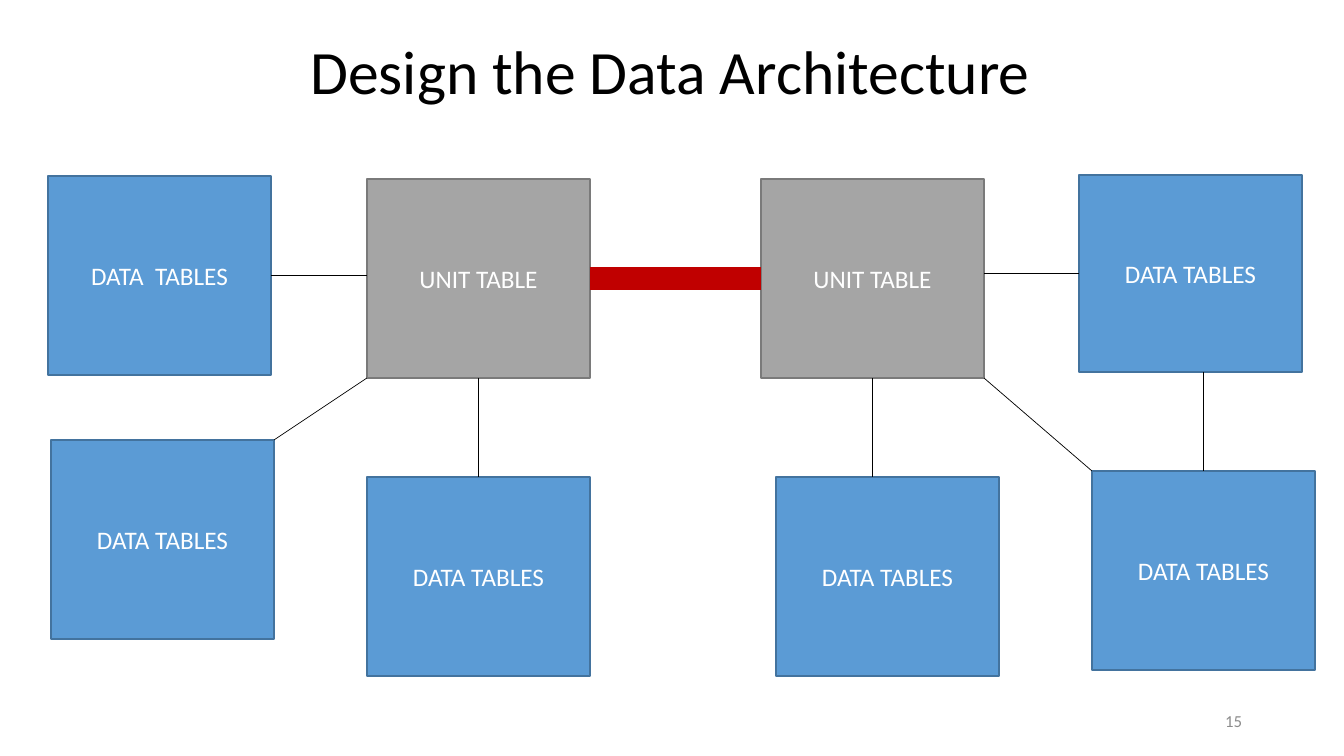
from lxml.etree import SubElement
from pptx import Presentation
from pptx.dml.color import RGBColor
from pptx.enum.shapes import MSO_CONNECTOR, MSO_SHAPE
from pptx.enum.text import MSO_ANCHOR, PP_ALIGN
from pptx.oxml.ns import qn
from pptx.util import Pt

# Content: lengths in px
TITLE = ("Design the Data Architecture", (0, 2, 1341, 146))
PAGE_NUMBER = ("15", (950, 701, 302, 40))
BOX_WIDTH, BOX_HEIGHT = 223, 199

# name: (label, kind, left, top, height)
BOXES = {
    "left unit": ("UNIT TABLE", "unit", 367, 179, BOX_HEIGHT),
    "southwest": ("DATA TABLES", "data", 51, 440, BOX_HEIGHT),
    "south left": ("DATA TABLES", "data", 367, 477, BOX_HEIGHT),
    "west": ("DATA  TABLES", "data", 48, 176, BOX_HEIGHT),
    "right unit": ("UNIT TABLE", "unit", 761, 179, BOX_HEIGHT),
    "south right": ("DATA TABLES", "data", 776, 477, BOX_HEIGHT),
    "southeast": ("DATA TABLES", "data", 1092, 471, BOX_HEIGHT),
    "east": ("DATA TABLES", "data", 1079, 175, 197),
}

# (start box, spot, end box, spot, joined ends, kind)
LINKS = [
    ("west", "right", "left unit", "left", "start", "thin"),
    ("southwest", "top right", "left unit", "bottom left", "none", "thin"),
    ("left unit", "bottom", "south left", "top", "both", "thin"),
    ("right unit", "right", "east", "left", "end", "thin"),
    ("right unit", "bottom right", "southeast", "top left", "none", "thin"),
    ("east", "bottom", "southeast", "top", "end", "thin"),
    ("right unit", "bottom", "south right", "top", "start", "thin"),
    ("left unit", "right", "right unit", "left", "both", "bridge"),
]

THEME = {
    "font": "Calibri",
    "sizes": {"title": 44, "label": 18, "number": 12},
    "text": {"title": "000000", "label": "FFFFFF", "number": "8C8C8C"},
    "boxes": {"unit": ("A5A5A5", "7A7A7A"), "data": ("5B9BD5", "43739E")},
    "links": {"thin": ("000000", 0.5), "bridge": ("C00000", 17)},
}
SITES = {"top": 0, "left": 1, "bottom": 2, "right": 3}
PX = 914400 / 100.8


def emu(length):
    return round(length * PX)


def color(code):
    return RGBColor.from_string(code)


def write(frame, text, role, align=PP_ALIGN.CENTER, spacing=None):
    frame.word_wrap = True
    frame.vertical_anchor = MSO_ANCHOR.MIDDLE
    para = frame.paragraphs[0]
    para.alignment = align
    para.line_spacing = spacing
    span = para.add_run()
    span.text = text
    span.font.name = THEME["font"]
    span.font.size = Pt(THEME["sizes"][role])
    span.font.color.rgb = color(THEME["text"][role])


def add_text(page, content, role, **style):
    text, place = content
    box = page.shapes.add_textbox(*map(emu, place))
    write(box.text_frame, text, role, **style)


def add_box(page, label, kind, left, top, height):
    box = page.shapes.add_shape(
        MSO_SHAPE.RECTANGLE, *map(emu, (left, top, BOX_WIDTH, height)))
    fill, outline = THEME["boxes"][kind]
    box.shadow.inherit = False
    box.fill.solid()
    box.fill.fore_color.rgb = color(fill)
    box.line.color.rgb = color(outline)
    box.line.width = Pt(1)
    write(box.text_frame, label, "label")
    return box


def point(box, spot):
    across = 0 if "left" in spot else 1 if "right" in spot else 0.5
    down = 0 if "top" in spot else 1 if "bottom" in spot else 0.5
    return [round(box.left + across * box.width),
            round(box.top + down * box.height)]


def add_link(page, start, start_spot, end, end_spot, joined, kind):
    begin, finish = point(start, start_spot), point(end, end_spot)
    # A free end lines up with the joined one
    axis = 1 if start_spot in ("left", "right") else 0
    if joined == "start":
        finish[axis] = begin[axis]
    elif joined == "end":
        begin[axis] = finish[axis]
    link = page.shapes.add_connector(MSO_CONNECTOR.STRAIGHT, *begin, *finish)
    if joined in ("start", "both"):
        link.begin_connect(start, SITES[start_spot])
    if joined in ("end", "both"):
        link.end_connect(end, SITES[end_spot])
    stroke, width = THEME["links"][kind]
    link.line.color.rgb = color(stroke)
    link.line.width = Pt(width)
    SubElement(link.element.spPr, qn("a:effectLst"))


def main():
    deck = Presentation()
    deck.slide_width, deck.slide_height = emu(1344), emu(756)
    page = deck.slides.add_slide(deck.slide_layouts[6])

    # Title and page number
    add_text(page, TITLE, "title", spacing=0.9)
    add_text(page, PAGE_NUMBER, "number", align=PP_ALIGN.RIGHT)

    # Tables and the links between them
    boxes = {name: add_box(page, *details) for name, details in BOXES.items()}
    for start, start_spot, end, end_spot, joined, kind in LINKS:
        add_link(page, boxes[start], start_spot, boxes[end], end_spot,
                 joined, kind)

    deck.save("out.pptx")


if __name__ == "__main__":
    main()
